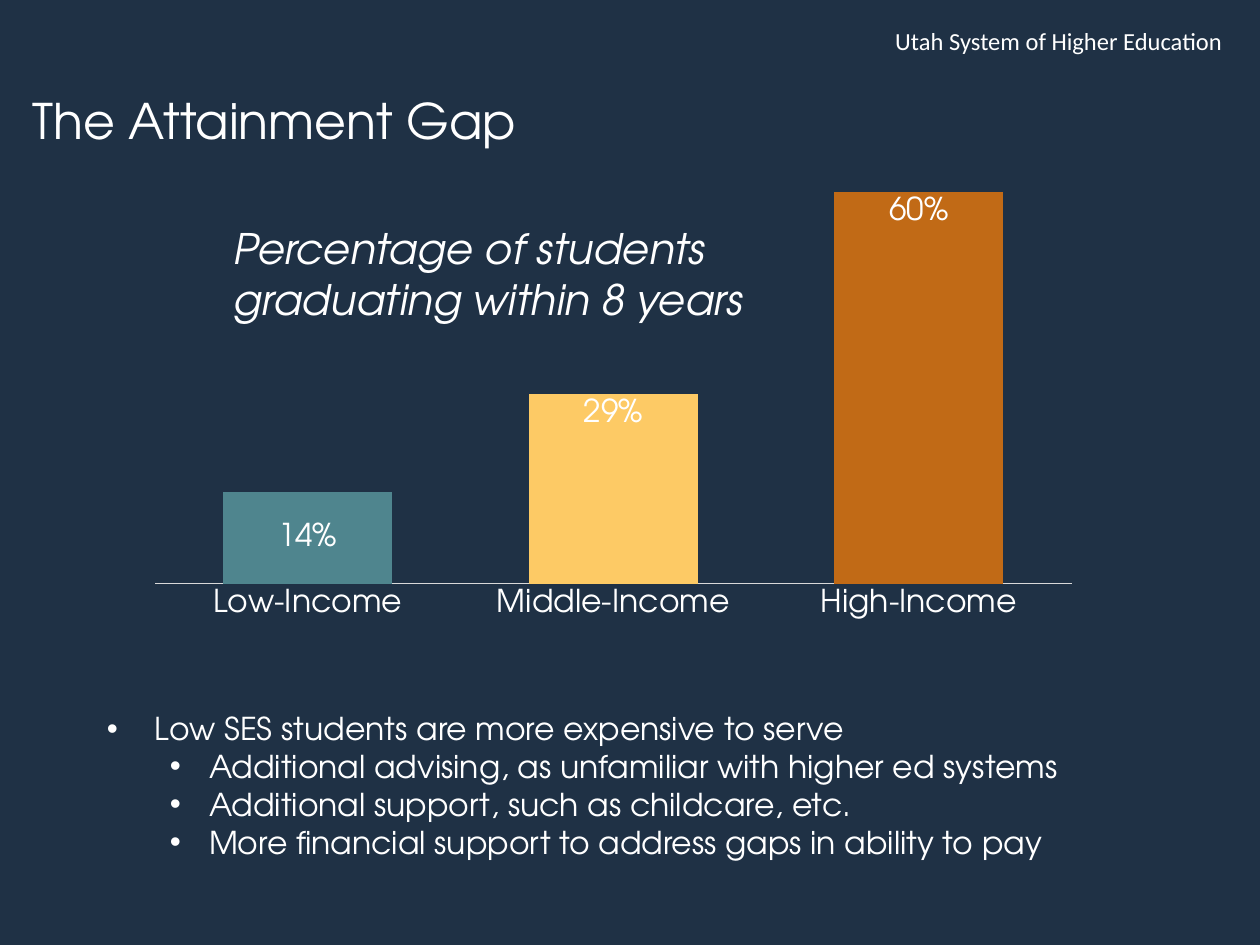
import pptx
import pptx.chart.data
import pptx.dml.color
import pptx.enum.chart
import pptx.enum.text
import pptx.oxml
import pptx.util
from pptx.oxml.ns import nsdecls
from pptx.util import Cm, Pt

COLORS = {"background": "1F3145", "text": "FFFFFF", "axis": "D9D9D9",
          "low": "4F858E", "middle": "FDCA65", "high": "C16A16"}
FONT = "TeX Gyre Adventor"


def rgb(name):
    return pptx.dml.color.RGBColor.from_string(COLORS[name])


def style(font, **values):
    """Apply the slide's typeface and colour, plus the given font values."""
    for key, value in {"name": FONT, "size": Pt(18), **values}.items():
        setattr(font, key, value)
    font.color.rgb = rgb("text")


prs = pptx.Presentation()
prs.slide_width, prs.slide_height = Cm(25.4), Cm(19.05)
s = prs.slides.add_slide(prs.slide_layouts[1])
s.background.fill.solid()
s.background.fill.fore_color.rgb = rgb("background")

# Chart
cd = pptx.chart.data.CategoryChartData(number_format="0%")
cd.categories = ["Low-Income", "Middle-Income", "High-Income"]
cd.add_series("Series 1", (0.14, 0.29, 0.6))
chart = s.shapes.add_chart(pptx.enum.chart.XL_CHART_TYPE.COLUMN_CLUSTERED,
                           Cm(2.74), Cm(2.34), Cm(19.25), Cm(10.36), cd).chart
chart.has_legend = chart.has_title = False
style(chart.font)

axis = chart.category_axis
axis.major_tick_mark = pptx.enum.chart.XL_TICK_MARK.NONE
axis.format.line.color.rgb = rgb("axis")
axis.format.line.width = Pt(0.75)
style(axis.tick_labels.font)
values = chart.value_axis
for key, value in {"minimum_scale": 0, "maximum_scale": 0.7,
                   "has_major_gridlines": False, "visible": False}.items():
    setattr(values, key, value)

plot = chart.plots[0]
plot.vary_by_categories = False
plot.gap_width, plot.overlap = 81, -77
series = plot.series[0]
labels = series.data_labels
labels.show_value = True
labels.number_format, labels.number_format_is_linked = "0%", False
style(labels.font)
pos = pptx.enum.chart.XL_LABEL_POSITION
for i, (color, place) in enumerate([("low", pos.CENTER), ("middle", pos.INSIDE_END),
                                    ("high", pos.INSIDE_END)]):
    point = series.points[i]
    point.format.fill.solid()
    point.format.fill.fore_color.rgb = rgb(color)
    style(point.data_label.font)
    point.data_label.position = place

# Fixed inner plot area, as fractions of the chart
area = chart._chartSpace.chart.plotArea
for old in area.xpath("c:layout"):
    area.remove(old)
area.insert(0, pptx.oxml.parse_xml(
    f'<c:layout {nsdecls("c")}><c:manualLayout><c:layoutTarget val="inner"/>'
    '<c:xMode val="edge"/><c:yMode val="edge"/><c:x val="0.02"/><c:y val="0.02"/>'
    '<c:w val="0.96"/><c:h val="0.89"/></c:manualLayout></c:layout>'))

# Text: shape, box in cm, anchor, alignment, font values, (level, text) lines
align, anchor = pptx.enum.text.PP_ALIGN, pptx.enum.text.MSO_ANCHOR
header, caption = [s.shapes.add_textbox(0, 0, 0, 0) for _ in range(2)]
body = s.placeholders[1]
texts = [
    (header, (10.29, 0.41, 14.6, 0.86), anchor.TOP, align.RIGHT,
     {"name": "Calibri", "size": Pt(14)}, [(0, "Utah System of Higher Education")]),
    (s.shapes.title, (0.41, 1.7, 23.93, 1.45), anchor.MIDDLE, align.LEFT,
     {"size": Pt(28)}, [(0, "The Attainment Gap")]),
    (caption, (4.45, 4.37, 12.07, 2.31), anchor.TOP, align.LEFT,
     {"size": Pt(24), "italic": True},
     [(0, "Percentage of students graduating within 8 years")]),
    (body, (1.9, 14.17, 20.12, 3.33), anchor.TOP, align.LEFT, {},
     [(0, "Low SES students are more expensive to serve"),
      (1, "Additional advising, as unfamiliar with higher ed systems"),
      (1, "Additional support, such as childcare, etc."),
      (1, "More financial support to address gaps in ability to pay")]),
]
indents = [(0.97, -0.97), (2.06, -0.79)]
for sp, box, vertical, horizontal, font, lines in texts:
    for key, value in zip(("left", "top", "width", "height"), box):
        setattr(sp, key, Cm(value))
    tf = sp.text_frame
    tf.word_wrap = True
    tf.auto_size = pptx.enum.text.MSO_AUTO_SIZE.NONE
    tf.vertical_anchor = vertical
    for n, (level, text) in enumerate(lines):
        p = tf.paragraphs[0] if n == 0 else tf.add_paragraph()
        p.level, p.alignment, p.space_before = level, horizontal, Pt(0)
        if sp is body:
            pPr = p._p.get_or_add_pPr()
            for key, value in zip(("marL", "indent"), indents[level]):
                pPr.set(key, str(Cm(value)))
            for tag in ('buFont typeface="Arial"', 'buChar char="•"'):
                pPr.append(pptx.oxml.parse_xml(f'<a:{tag} {nsdecls("a")}/>'))
        r = p.add_run()
        r.text = text
        style(r.font, **font)

prs.save("out.pptx")
